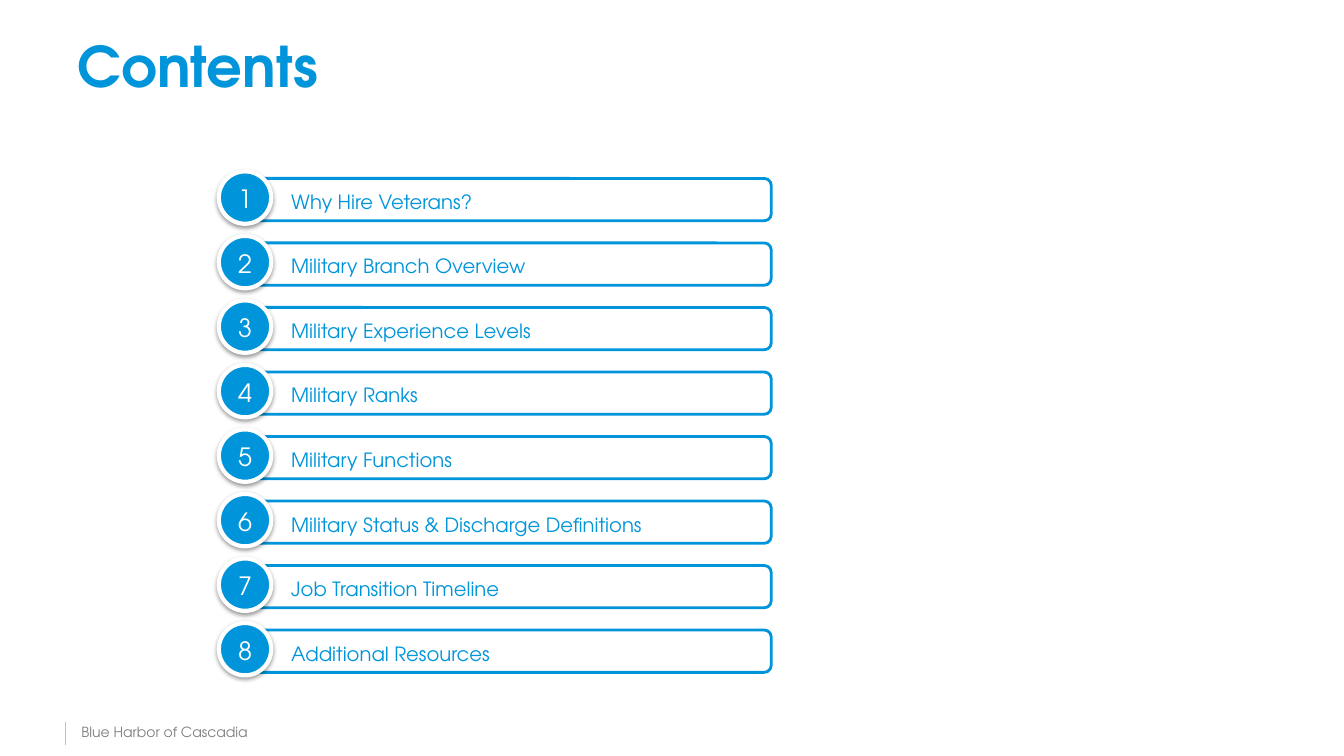
import pptx
import pptx.util
import pptx.dml.color
import pptx.enum.shapes
import pptx.enum.text
import pptx.oxml
from pptx.util import Inches

FONT = "TeX Gyre Adventor"
BLUE, WHITE, GRAY, RULE = "0095DA", "FFFFFF", "808080", "BEC0C2"
NAMESPACE = 'xmlns:a="http://schemas.openxmlformats.org/drawingml/2006/main"'
SHAPES = pptx.enum.shapes.MSO_SHAPE
ANCHOR = pptx.enum.text.MSO_ANCHOR
ALIGN = pptx.enum.text.PP_ALIGN

TOPICS = [
    "Why Hire Veterans?",
    "Military Branch Overview",
    "Military Experience Levels",
    "Military Ranks",
    "Military Functions",
    "Military Status & Discharge Definitions",
    "Job Transition Timeline",
    "Additional Resources",
]


def color(value):
    return pptx.dml.color.RGBColor.from_string(value)


def write(shape, text, size, text_color, bold=False,
          align=ALIGN.LEFT, anchor=ANCHOR.TOP):
    frame = shape.text_frame
    frame.text = text
    frame.word_wrap = True
    frame.vertical_anchor = anchor
    para = frame.paragraphs[0]
    para.alignment = align
    font = para.runs[0].font
    font.name, font.size, font.bold = FONT, pptx.util.Pt(size), bold
    font.color.rgb = color(text_color)


def add_text(shapes, box, text, size, text_color, **layout):
    write(shapes.add_textbox(*map(Inches, box)), text, size, text_color, **layout)


def add_panel(shapes, kind, box, fill, line, width):
    panel = shapes.add_shape(kind, *map(Inches, box))
    panel.shadow.inherit = False
    panel.fill.solid()
    panel.fill.fore_color.rgb = color(fill)
    panel.line.color.rgb = color(line)
    panel.line.width = pptx.util.Pt(width)
    return panel


def add_drop_shadow(shape):
    effects = shape._element.spPr.find(pptx.oxml.ns.qn("a:effectLst"))
    effects.append(pptx.oxml.parse_xml(
        f'<a:outerShdw {NAMESPACE} blurRad="39370" dist="20320" dir="5400000" '
        'rotWithShape="0"><a:srgbClr val="000000"><a:alpha val="38000"/>'
        '</a:srgbClr></a:outerShdw>'))


def add_title(page, left, top, width, height):
    title = page.shapes.title
    title.left, title.top = Inches(left), Inches(top)
    title.width, title.height = Inches(width), Inches(height)
    write(title, "Contents", 40, BLUE, bold=True)


def add_topic(page, number, topic, left, top, width, height):
    row = page.shapes.add_group_shape().shapes
    badge_size = 0.52
    # Outlined bar
    bar_left = left + 0.34
    add_panel(row, SHAPES.ROUNDED_RECTANGLE,
              (bar_left, top, width - 0.34, height), WHITE, BLUE, 2)
    # Numbered badge
    badge_box = (left, top - 0.07, badge_size, badge_size)
    badge = add_panel(row, SHAPES.OVAL, badge_box, BLUE, WHITE, 3)
    add_drop_shadow(badge)
    add_text(row, (left, top, badge_size, 0.41), str(number), 18, WHITE,
             align=ALIGN.CENTER)
    # Topic name
    add_text(row, (left + 0.62, top + 0.02, width - 0.62, height), topic, 14, BLUE,
             anchor=ANCHOR.MIDDLE)


def add_contents(page, left, top, width, pitch):
    for index, topic in enumerate(TOPICS):
        add_topic(page, index + 1, topic, left, top + index * pitch, width, 0.42)


def add_footer(page, left, top, width, height):
    rule = page.shapes.add_connector(
        pptx.enum.shapes.MSO_CONNECTOR.STRAIGHT,
        Inches(left), Inches(top + 0.03), Inches(left), Inches(top + height - 0.01))
    rule.line.color.rgb = color(RULE)
    rule.line.width = pptx.util.Pt(0.5)
    rule._element.spPr.append(pptx.oxml.parse_xml(f"<a:effectLst {NAMESPACE}/>"))
    add_text(page.shapes, (left + 0.06, top, width, height),
             "Blue Harbor of Cascadia", 10, GRAY)


def main():
    deck = pptx.Presentation()
    deck.slide_width, deck.slide_height = Inches(13.33), Inches(7.5)
    page = deck.slides.add_slide(deck.slide_layouts.get_by_name("Title Only"))
    add_footer(page, 0.65, 7.13, 2.86, 0.27)
    add_title(page, 0.67, 0.26, 12, 0.94)
    add_contents(page, 2.17, 1.77, 5.48, 0.64)
    deck.save("out.pptx")


if __name__ == "__main__":
    main()
